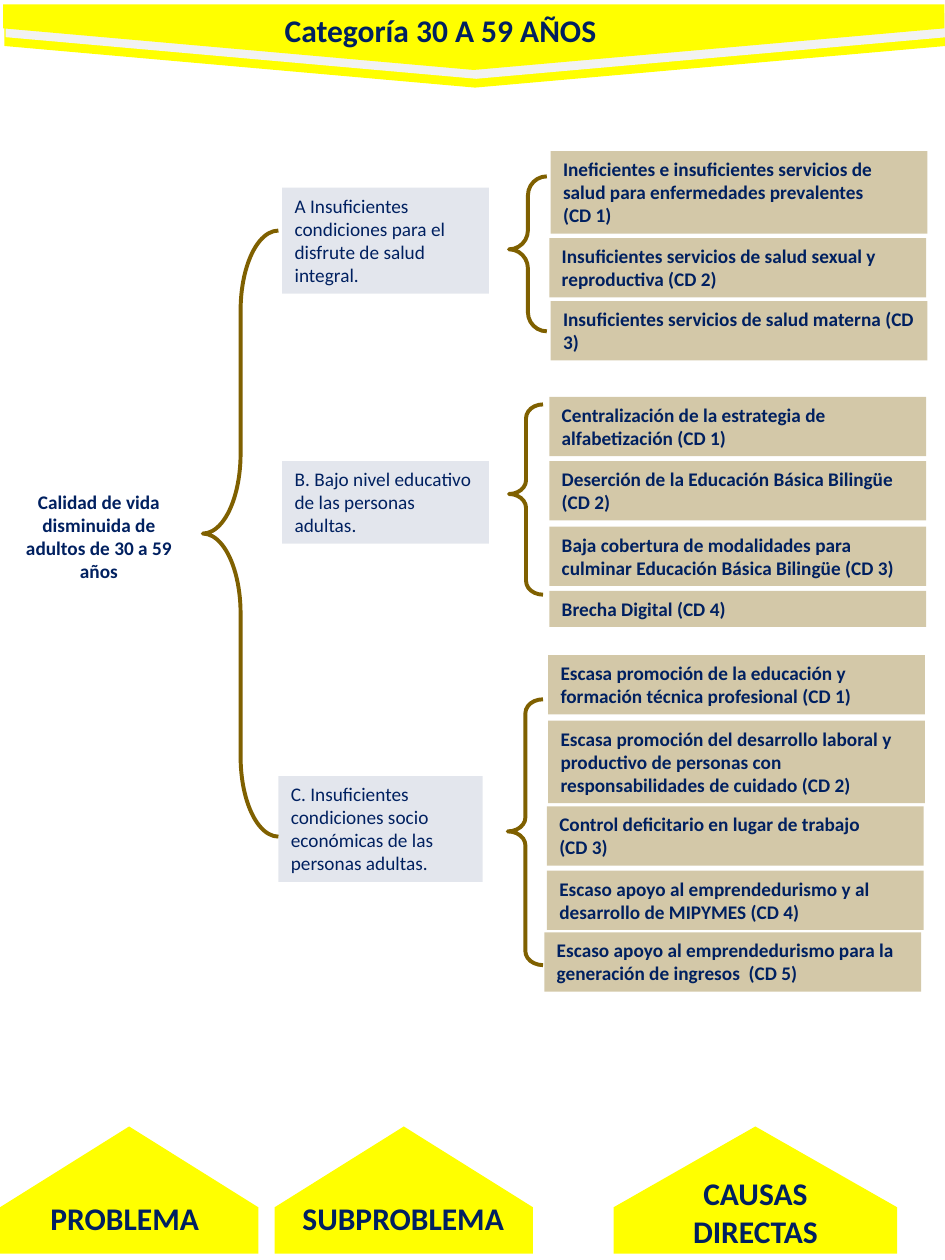
from dataclasses import dataclass

from pptx import Presentation
from pptx.dml.color import RGBColor
from pptx.enum.shapes import MSO_SHAPE as Shape
from pptx.enum.text import MSO_ANCHOR as Anchor, MSO_AUTO_SIZE as AutoSize, PP_ALIGN as Align
from pptx.oxml.ns import qn
from pptx.oxml.xmlchemy import OxmlElement
from pptx.util import Inches, Pt


@dataclass(frozen=True)
class Theme:
    font: str = "Calibri"
    heading_size: int = 18
    body_size: int = 11
    navy: str = "002060"
    brown: str = "7F6000"
    yellow: str = "FFFF00"
    grey: str = "F2F2F2"
    subproblem_opacity: int = 11
    cause_opacity: int = 34
    brace_width: float = 2.25


THEME = Theme()

SUBPROBLEMS = [
    (2.24, 1.49, 1.64, 4, "A Insuficientes condiciones para el disfrute de salud integral."),
    (2.24, 3.66, 1.64, 3, "B. Bajo nivel educativo de las personas adultas."),
    (2.21, 6.16, 1.62, 4, "C. Insuficientes condiciones socio económicas de las personas adultas."),
]

CAUSES = [
    (4.37, 1.2, 3, "Ineficientes e insuficientes servicios de salud para enfermedades prevalentes\n(CD 1)"),
    (4.36, 1.89, 2, "Insuficientes servicios de salud sexual y reproductiva (CD 2)"),
    (4.37, 2.39, 2, "Insuficientes servicios de salud materna (CD 3)"),
    (4.36, 3.15, 2, "Centralización de la estrategia de alfabetización (CD 1)"),
    (4.36, 3.66, 2, "Deserción de la Educación Básica Bilingüe (CD 2)"),
    (4.36, 4.18, 2, "Baja cobertura de modalidades para culminar Educación Básica Bilingüe (CD 3)"),
    (4.36, 4.69, 1, "Brecha Digital (CD 4)"),
    (4.35, 5.2, 2, "Escasa promoción de la educación y formación técnica profesional (CD 1)"),
    (4.35, 5.72, 3, "Escasa promoción del desarrollo laboral y productivo de personas con "
                    "responsabilidades de cuidado (CD 2)"),
    (4.34, 6.4, 2, "Control deficitario en lugar de trabajo\n(CD 3)"),
    (4.34, 6.91, 2, "Escaso apoyo al emprendedurismo y al desarrollo de MIPYMES (CD 4)"),
    (4.32, 7.4, 2, "Escaso apoyo al emprendedurismo para la generación de ingresos  (CD 5)"),
]

BRACES = [
    (1.61, 1.83, 0.6, 4.81, 1.058, 0.5),
    (4.04, 1.4, 0.3, 1.23, 0.504, 0.471),
    (4.04, 3.21, 0.27, 1.51, 0.406, 0.471),
    (4.03, 5.55, 0.28, 2.11, 0.394, 0.497),
]

BANNER_LAYERS = [
    (3.51, -3.3, THEME.yellow),
    (3.52, -3.37, THEME.grey),
    (3.5, -3.44, THEME.yellow),
]

COLUMNS = [
    (0.52, 8.42, 2.05, (0.14, 9.47, 1.7, 0.4), "PROBLEMA"),
    (2.7, 8.42, 2.05, (2.24, 9.47, 1.92, 0.4), "SUBPROBLEMA"),
    (5.49, 8.32, 2.25, (5.27, 9.27, 1.45, 0.71), "CAUSAS DIRECTAS"),
]


def write(target, text, size=THEME.body_size, bold=False, align=Align.LEFT):
    frame = target.text_frame
    frame.word_wrap = True
    frame.auto_size = AutoSize.NONE
    frame.vertical_anchor = Anchor.TOP
    frame.margin_left = frame.margin_right = Inches(0.1)
    frame.margin_top = frame.margin_bottom = Inches(0.05)
    frame.text = text
    for paragraph in frame.paragraphs:
        paragraph.alignment = align
        font = paragraph.runs[0].font
        font.name = THEME.font
        font.size = Pt(size)
        font.bold = bold
        font.color.rgb = RGBColor.from_string(THEME.navy)


class ProblemTree:
    def __init__(self, slide, theme):
        self.slide = slide
        self.theme = theme

    def preset(self, kind, left, top, width, height):
        element = self.slide.shapes.add_shape(
            kind, Inches(left), Inches(top), Inches(width), Inches(height))
        element.shadow.inherit = False
        return element

    def paint(self, element, color, opacity=100):
        element.fill.solid()
        element.fill.fore_color.rgb = RGBColor.from_string(color)
        element.line.fill.background()
        if opacity < 100:
            alpha = OxmlElement("a:alpha")
            alpha.set("val", str(opacity * 1000))
            element.element.spPr.find(f"{qn('a:solidFill')}/{qn('a:srgbClr')}").append(alpha)

    def arrow(self, left, top, width, height, rotation, color):
        pointer = self.preset(Shape.RIGHT_ARROW, left, top, width, height)
        pointer.adjustments[0] = 1
        pointer.adjustments[1] = 0.635
        pointer.rotation = rotation
        self.paint(pointer, color)

    def brace(self, left, top, width, height, curl, middle):
        bracket = self.preset(Shape.LEFT_BRACE, left, top, width, height)
        bracket.adjustments[0] = curl
        bracket.adjustments[1] = middle
        bracket.fill.background()
        bracket.line.color.rgb = RGBColor.from_string(self.theme.brown)
        bracket.line.width = Pt(self.theme.brace_width)

    def box(self, left, top, width, lines, text, color, opacity, bold=False):
        panel = self.preset(Shape.RECTANGLE, left, top, width, 0.1 + 0.185 * lines)
        self.paint(panel, color, opacity)
        write(panel, text, bold=bold)

    def label(self, left, top, width, height, text, size):
        caption = self.slide.shapes.add_textbox(
            Inches(left), Inches(top), Inches(width), Inches(height))
        write(caption, text, size=size, bold=True, align=Align.CENTER)

    def title(self, left, top, width, height, text):
        heading = self.slide.shapes.title
        heading.left, heading.top = Inches(left), Inches(top)
        heading.width, heading.height = Inches(width), Inches(height)
        write(heading, text, size=self.theme.heading_size, bold=True)
        heading.element.getparent().append(heading.element)


def main():
    deck = Presentation()
    deck.slide_width, deck.slide_height = Inches(7.5), Inches(10)
    slide = deck.slides.add_slide(deck.slide_layouts.get_by_name("Title Only"))
    tree = ProblemTree(slide, THEME)

    for left, top, color in BANNER_LAYERS:
        tree.arrow(left, top, 0.52, 7.47, 90, color)
    tree.title(2.16, 0.04, 3.17, 0.4, "Categoría 30 A 59 AÑOS")

    tree.label(0.03, 3.84, 1.51, 0.84,
               "Calidad de vida disminuida de adultos de 30 a 59 años", THEME.body_size)
    for left, top, width, lines, text in SUBPROBLEMS:
        tree.box(left, top, width, lines, text, THEME.navy, THEME.subproblem_opacity)
    for left, top, lines, text in CAUSES:
        tree.box(left, top, 2.99, lines, text, THEME.brown, THEME.cause_opacity, bold=True)
    for brace in BRACES:
        tree.brace(*brace)

    for left, top, span, caption_area, caption in COLUMNS:
        tree.arrow(left, top, 1.01, span, 270, THEME.yellow)
        tree.label(*caption_area, caption, THEME.heading_size)

    deck.save("out.pptx")


if __name__ == "__main__":
    main()
